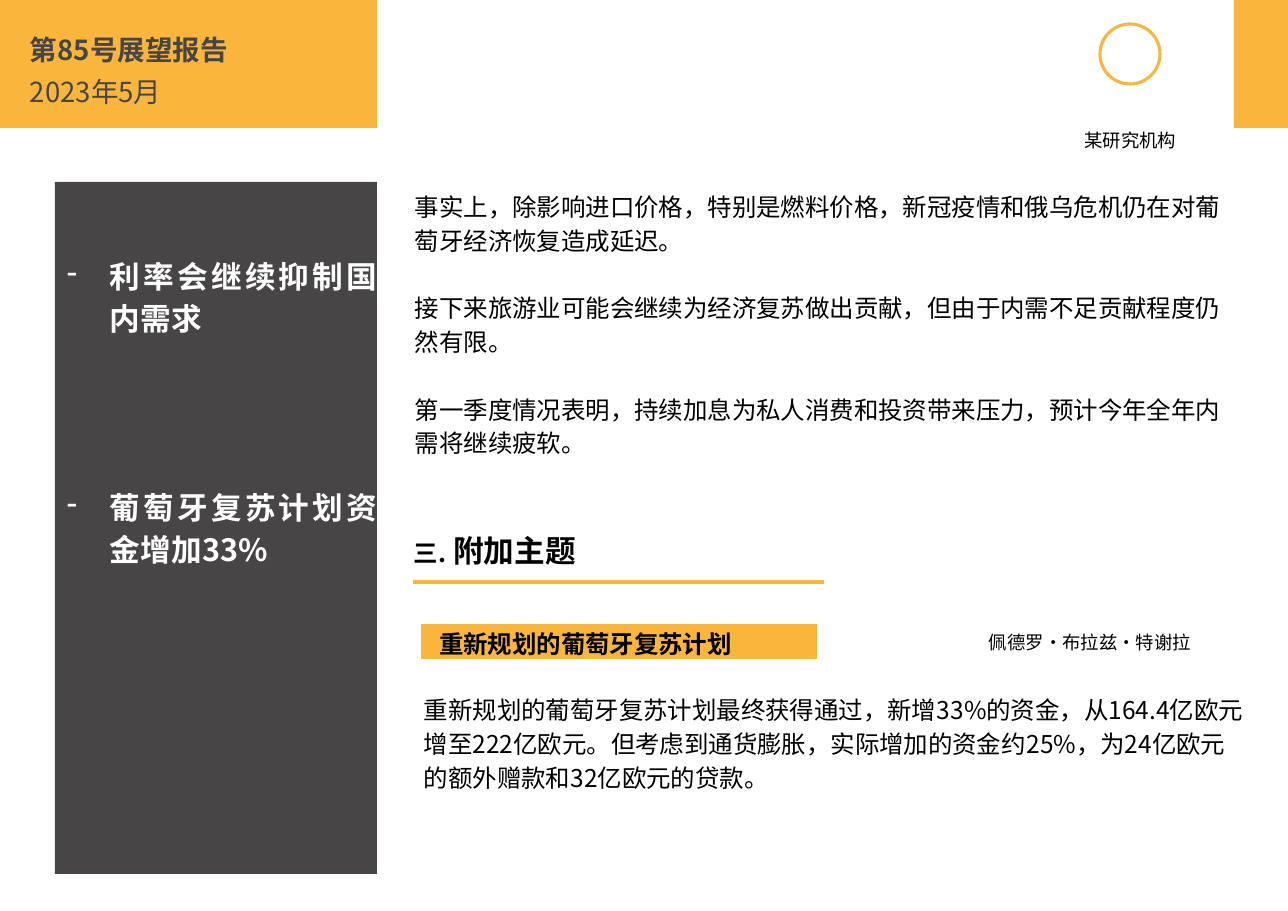
from lxml import etree
from pptx import Presentation, util as u
from pptx.dml.color import RGBColor
from pptx.enum import shapes, text
from pptx.oxml.ns import qn

PX = 914400 / 110.2
FONT = "Noto Sans CJK SC"
AMBER, GREY, WHITE, BLACK = "FAB63C", "484546", "FFFFFF", "000000"

BARS = [(0, 0, 377, 128), (1234, 0, 54, 128)]
ISSUE = "第85号展望报告"
DATE = "2023年5月"
PUBLISHER = "某研究机构"
KEY_POINTS = ["利率会继续抑制国内需求", "葡萄牙复苏计划资金增加33%"]
OUTLOOK = [
    "事实上，除影响进口价格，特别是燃料价格，新冠疫情和俄乌危机仍在对葡萄牙经济恢复造成延迟。",
    "接下来旅游业可能会继续为经济复苏做出贡献，但由于内需不足贡献程度仍然有限。",
    "第一季度情况表明，持续加息为私人消费和投资带来压力，预计今年全年内需将继续疲软。",
]
SECTION = [("三.", 16), (" 附加主题", 20)]
TOPIC = "重新规划的葡萄牙复苏计划"
AUTHOR = "佩德罗・布拉兹・特谢拉"
PLAN = ("重新规划的葡萄牙复苏计划最终获得通过，新增33%的资金，从164.4亿欧元增至222亿欧元。"
        "但考虑到通货膨胀，实际增加的资金约25%，为24亿欧元的额外赠款和32亿欧元的贷款。")


def px(n):
    return u.Emu(round(n * PX))


def rgb(color):
    return RGBColor.from_string(color)


def add_shape(kind, box, fill=None, line=None):
    sp = s.shapes.add_shape(kind, *map(px, box))
    sp.shadow.inherit = False
    if fill:
        sp.fill.solid()
        sp.fill.fore_color.rgb = rgb(fill)
    else:
        sp.fill.background()
    if line:
        sp.line.color.rgb = rgb(line)
        sp.line.width = u.Pt(2)
    else:
        sp.line.fill.background()
    return sp


def add_box(box):
    return s.shapes.add_textbox(*map(px, box))


def frame(sp, left=0, top=0, right=0):
    tf = sp.text_frame
    tf.word_wrap = True
    tf.vertical_anchor = text.MSO_ANCHOR.TOP
    tf.margin_left, tf.margin_top = px(left), px(top)
    tf.margin_right, tf.margin_bottom = px(right), 0
    return tf


def write(tf, content, size=16, color=BLACK, bold=False, align="LEFT",
          spacing=None, before=0, bullet=None):
    first = not tf.paragraphs[0].runs
    p = tf.paragraphs[0] if first else tf.add_paragraph()
    p.alignment = getattr(text.PP_ALIGN, align)
    if spacing:
        p.line_spacing = spacing
    if before and not first:
        p.space_before = u.Pt(before)
    if bullet:
        pPr = p._p.get_or_add_pPr()
        pPr.set("marL", str(px(55)))
        pPr.set("indent", str(px(-43)))
        clr = etree.SubElement(pPr, qn("a:buClr"))
        etree.SubElement(clr, qn("a:srgbClr")).set("val", color)
        etree.SubElement(pPr, qn("a:buChar")).set("char", bullet)
    runs = [(content, size)] if isinstance(content, str) else content
    for words, pt in runs:
        r = p.add_run()
        r.text = words
        r.font.name, r.font.size, r.font.bold = FONT, u.Pt(pt), bold
        r.font.color.rgb = rgb(color)
        etree.SubElement(r._r.get_or_add_rPr(), qn("a:ea")).set("typeface", FONT)


prs = Presentation()
prs.slide_width, prs.slide_height = px(1288), px(911)
s = prs.slides.add_slide(prs.slide_layouts[6])
RECT, OVAL = shapes.MSO_SHAPE.RECTANGLE, shapes.MSO_SHAPE.OVAL

panel = frame(add_shape(RECT, (55, 182, 322, 692), GREY), top=70)
for point in KEY_POINTS:
    write(panel, point, size=20, color=WHITE, bold=True, align="JUSTIFY",
          spacing=1.15, before=96, bullet="-")

for bar in BARS:
    add_shape(RECT, bar, AMBER)
add_shape(OVAL, (1100, 24, 60, 60), line=AMBER)

outlook = frame(add_box((404, 182, 845, 372)), 11, 6, 11)
for paragraph in OUTLOOK:
    write(outlook, paragraph, spacing=1.15, before=22)

header = frame(add_box((30, 33, 264, 76)))
write(header, ISSUE, size=18, color=GREY, bold=True)
write(header, DATE, size=18, color=GREY, before=6)

write(frame(add_box((1067, 123, 127, 33)), 6, 6, 6), PUBLISHER, size=12, align="CENTER")
write(frame(add_box((414, 532, 388, 37))), SECTION, bold=True)

rule = s.shapes.add_connector(shapes.MSO_CONNECTOR.STRAIGHT,
                              px(413), px(582), px(824), px(582))
rule.line.color.rgb = rgb(AMBER)
rule.line.width = u.Pt(2)
etree.SubElement(rule._element.spPr, qn("a:effectLst"))

write(frame(add_shape(RECT, (421, 624, 396, 35), AMBER), 18, 5), TOPIC, bold=True)
write(frame(add_box((989, 631, 260, 26))), AUTHOR, size=12)
write(frame(add_box((413, 685, 845, 172)), 11, 6, 11), PLAN, spacing=1.15)

prs.save("out.pptx")
